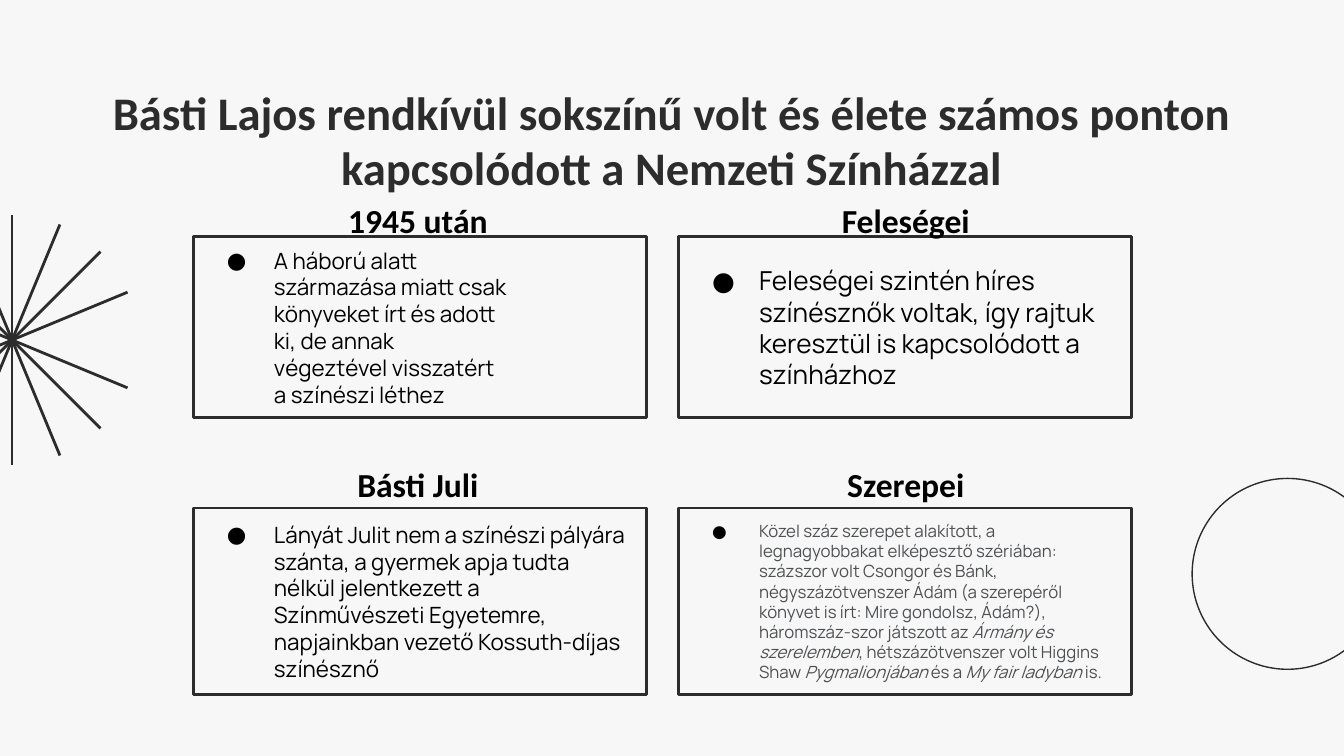
from dataclasses import dataclass
from math import cos, radians, sin

from lxml import etree
from pptx import Presentation
from pptx.dml.color import RGBColor
from pptx.enum.shapes import MSO_CONNECTOR, MSO_SHAPE
from pptx.enum.text import MSO_ANCHOR, PP_ALIGN
from pptx.oxml.ns import qn
from pptx.util import Inches, Pt

STRAIGHT = MSO_CONNECTOR.STRAIGHT
RECTANGLE, OVAL = MSO_SHAPE.RECTANGLE, MSO_SHAPE.OVAL
TOP, MIDDLE = MSO_ANCHOR.TOP, MSO_ANCHOR.MIDDLE
CENTER, LEFT = PP_ALIGN.CENTER, PP_ALIGN.LEFT


@dataclass(frozen=True)
class Theme:
    background: str = "F7F7F7"
    ink: str = "2C2C2C"
    black: str = "000000"
    grey: str = "4E5154"
    heading_font: str = "Calibri"
    body_font: str = "Manrope"
    title_size: float = 25
    heading_size: float = 18
    large_size: float = 14
    body_size: float = 12
    small_size: float = 9
    thick_line: float = 1.5
    thin_line: float = 0.75


class SlideBuilder:
    def __init__(self, slide, theme):
        self.slide = slide
        self.theme = theme
        fill = slide.background.fill
        fill.solid()
        fill.fore_color.rgb = RGBColor.from_string(theme.background)

    def style_line(self, line, width):
        line.color.rgb = RGBColor.from_string(self.theme.ink)
        line.width = Pt(width)

    def line(self, start_x, start_y, end_x, end_y):
        connector = self.slide.shapes.add_connector(
            STRAIGHT, Inches(start_x), Inches(start_y), Inches(end_x), Inches(end_y))
        self.style_line(connector.line, self.theme.thick_line)
        etree.SubElement(connector._element.spPr, qn("a:effectLst"))

    def starburst(self, center_x, center_y, radius):
        """Draw mirrored pairs of diameters, from upright down in 22.5 degree steps."""
        for angle in (90, 67.5, 45, 22.5):
            x, y = radius * cos(radians(angle)), radius * sin(radians(angle))
            self.line(center_x - x, center_y - y, center_x + x, center_y + y)
            self.line(center_x - x, center_y + y, center_x + x, center_y - y)

    def outline(self, kind, left, top, width, height, line_width):
        shape = self.slide.shapes.add_shape(
            kind, Inches(left), Inches(top), Inches(width), Inches(height))
        shape.shadow.inherit = False
        shape.fill.background()
        self.style_line(shape.line, line_width)
        return shape

    def prepare_frame(self, frame, anchor, right_inset=0.1):
        frame.word_wrap = True
        frame.vertical_anchor = anchor
        frame.margin_left = frame.margin_top = frame.margin_bottom = Inches(0.1)
        frame.margin_right = Inches(right_inset)

    def run(self, paragraph, text, font, size, color, bold=False, italic=False):
        run = paragraph.add_run()
        run.text = text
        run.font.name = font
        run.font.size = Pt(size)
        run.font.color.rgb = RGBColor.from_string(color)
        run.font.bold = bold
        run.font.italic = italic

    def heading(self, text, left, top, width, height, size, color):
        box = self.slide.shapes.add_textbox(
            Inches(left), Inches(top), Inches(width), Inches(height))
        self.prepare_frame(box.text_frame, TOP)
        paragraph = box.text_frame.paragraphs[0]
        paragraph.alignment = CENTER
        self.run(paragraph, text, self.theme.heading_font, size, color, bold=True)

    def bullet(self, paragraph):
        properties = paragraph._p.get_or_add_pPr()
        properties.set("marL", str(Inches(0.5)))
        properties.set("indent", str(Inches(-0.35)))
        color = etree.SubElement(properties, qn("a:buClr"))
        etree.SubElement(color, qn("a:srgbClr"), val=self.theme.black)
        etree.SubElement(properties, qn("a:buFont"), typeface=self.theme.body_font)
        etree.SubElement(properties, qn("a:buChar"), char="●")

    def card(self, parts, left, top, width, height, size, color, right_inset):
        """Draw a framed bullet; every second part of the text is italic."""
        shape = self.outline(RECTANGLE, left, top, width, height, self.theme.thick_line)
        self.prepare_frame(shape.text_frame, MIDDLE, right_inset)
        paragraph = shape.text_frame.paragraphs[0]
        paragraph.alignment = LEFT
        self.bullet(paragraph)
        for index, text in enumerate(parts):
            self.run(paragraph, text, self.theme.body_font, size, color,
                     italic=index % 2 == 1)


def main():
    theme = Theme()
    presentation = Presentation()
    presentation.slide_width = Inches(10)
    presentation.slide_height = Inches(10) * 9 // 16
    slide = presentation.slides.add_slide(presentation.slide_layouts[6])
    builder = SlideBuilder(slide, theme)

    builder.starburst(0.09, 2.53, 0.93)
    builder.outline(OVAL, 8.87, 3.56, 1.42, 1.42, theme.thin_line)
    builder.heading(
        "Básti Lajos rendkívül sokszínű volt és élete számos ponton "
        "kapcsolódott a Nemzeti Színházzal",
        0.54, 0.52, 8.91, 1.02, theme.title_size, theme.ink)

    columns = [(1.34, 1.44), (4.97, 5.05)]  # heading left, card left
    rows = [(1.39, 1.76, 1.35), (3.35, 3.78, 1.39)]  # heading top, card top, card height
    # column, row, heading, text size, colour, right inset, text parts
    topics = [
        (0, 0, "1945 után", theme.body_size, theme.black, 1.02, [
            "A háború alatt származása miatt csak könyveket írt és adott ki, "
            "de annak végeztével visszatért a színészi léthez"]),
        (1, 0, "Feleségei", theme.large_size, theme.black, 0.1, [
            "Feleségei szintén híres színésznők voltak, így rajtuk keresztül is "
            "kapcsolódott a színházhoz"]),
        (0, 1, "Básti Juli", theme.body_size, theme.black, 0.1, [
            "Lányát Julit nem a színészi pályára szánta, a gyermek apja tudta nélkül "
            "jelentkezett a Színművészeti Egyetemre, napjainkban vezető "
            "Kossuth-díjas színésznő"]),
        (1, 1, "Szerepei", theme.small_size, theme.grey, 0.1, [
            "Közel száz szerepet alakított, a legnagyobbakat elképesztő szériában: "
            "százszor volt Csongor és Bánk, négyszázötvenszer Ádám (a szerepéről "
            "könyvet is írt: Mire gondolsz, Ádám?), háromszáz-szor játszott az ",
            "Ármány és szerelemben",
            ", hétszázötvenszer volt Higgins Shaw ",
            "Pygmalionjában",
            " és a ",
            "My fair ladyban",
            " is."]),
    ]
    for column, row, heading, size, color, right_inset, parts in topics:
        heading_left, card_left = columns[column]
        heading_top, card_top, card_height = rows[row]
        builder.card(parts, card_left, card_top, 3.37, card_height,
                     size, color, right_inset)
        builder.heading(heading, heading_left, heading_top, 3.54, 0.5,
                        theme.heading_size, theme.black)

    presentation.save("out.pptx")


if __name__ == "__main__":
    main()
